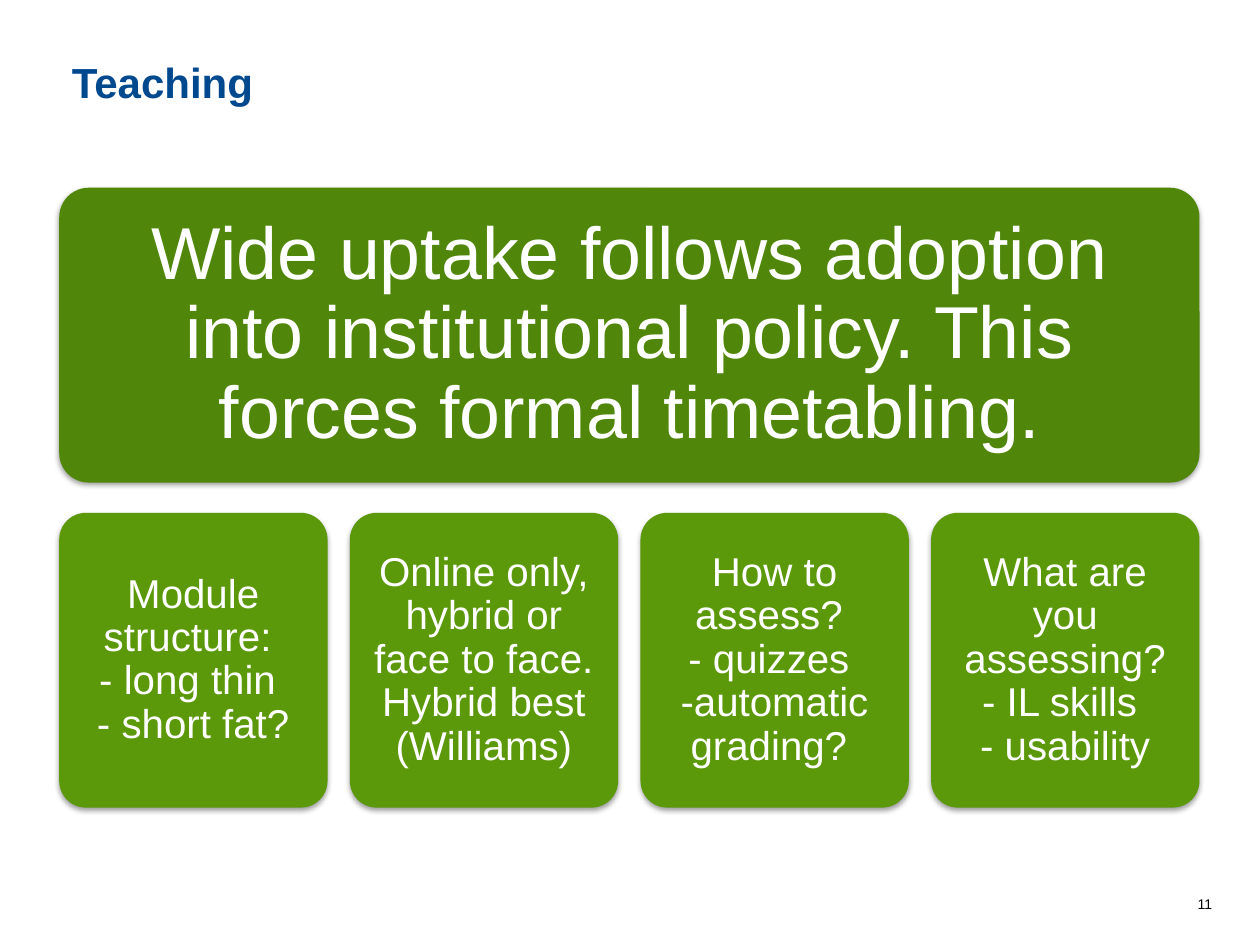
from dataclasses import dataclass

from lxml.etree import SubElement as Sub
from pptx import Presentation
from pptx.dml.color import RGBColor as RGB
from pptx.enum.shapes import MSO_SHAPE as Shape
from pptx.enum.text import MSO_ANCHOR as Anchor, MSO_AUTO_SIZE as Fit, PP_ALIGN as Align
from pptx.oxml.ns import qn
from pptx.util import Inches, Pt

BLUE = RGB(0x01, 0x49, 0x8E)
DARK = RGB(0x50, 0x86, 0x09)
GREEN = RGB(0x5B, 0x98, 0x0A)
WHITE = RGB(0xFF, 0xFF, 0xFF)
BLACK = RGB(0x00, 0x00, 0x00)

LEFT, WIDTH, HEIGHT = 0.47, 9.05, 2.34
CARD = 2.13
TOPICS = [
    "Module structure: \v- long thin \v- short fat?",
    "Online only, hybrid or face to face. Hybrid best (Williams)",
    "How to assess? \v- quizzes \v-automatic grading? ",
    "What are you assessing?\v- IL skills \v- usability",
]


@dataclass
class Panel:
    text: str
    left: float
    top: float
    width: float
    fill: RGB
    size: int
    inset: float


def write(shape, text: str, size: int, color: RGB, align, anchor,
          inset: tuple[float, float], bold: bool = False) -> None:
    """Fill a shape with one formatted paragraph."""
    frame = shape.text_frame
    side, edge = Inches(inset[0]), Inches(inset[1])
    form = {"word_wrap": True, "auto_size": Fit.NONE, "vertical_anchor": anchor,
            "margin_left": side, "margin_right": side,
            "margin_top": edge, "margin_bottom": edge}
    for name, value in form.items():
        setattr(frame, name, value)
    para = frame.paragraphs[0]
    para.text = text
    para.alignment = align
    para.space_before = Pt(0)
    for name, value in {"name": "Arial", "size": Pt(size), "bold": bold}.items():
        setattr(para.font, name, value)
    para.font.color.rgb = color


def shade(shape) -> None:
    """Give a shape a soft shadow below it."""
    shape.shadow.inherit = False
    effects = shape._element.spPr.find(qn("a:effectLst"))
    outer = Sub(effects, qn("a:outerShdw"), blurRad=str(Pt(3.1)), dist=str(Pt(1.6)),
                dir="5400000", rotWithShape="0")
    tint = Sub(outer, qn("a:srgbClr"), val="000000")
    Sub(tint, qn("a:alpha"), val="38000")


def draw(slide, panel: Panel) -> None:
    """Draw a rounded panel with centred white text."""
    box = slide.shapes.add_shape(
        Shape.ROUNDED_RECTANGLE, Inches(panel.left), Inches(panel.top),
        Inches(panel.width), Inches(HEIGHT))
    box.adjustments[0] = 0.1
    box.fill.solid()
    box.fill.fore_color.rgb = panel.fill
    box.line.fill.background()
    shade(box)
    write(box, panel.text, panel.size, WHITE, Align.CENTER, Anchor.MIDDLE,
          (panel.inset, panel.inset))
    box.text_frame.paragraphs[0].line_spacing = 0.9


def main() -> None:
    deck = Presentation()
    deck.slide_width, deck.slide_height = Inches(10), Inches(7.5)
    slide = deck.slides.add_slide(deck.slide_layouts[5])

    # Title
    title = slide.shapes.title
    title.left, title.top = Inches(LEFT), Inches(0.4)
    title.width, title.height = Inches(9.06), Inches(0.59)
    write(title, "Teaching", 24, BLUE, Align.LEFT, Anchor.TOP, (0.1, 0.05), True)

    # Main statement above a row of topics
    draw(slide, Panel("Wide uptake follows adoption into institutional policy. "
                      "This forces formal timetabling.",
                      LEFT, 1.49, WIDTH, DARK, 42, 0.17))
    step = (WIDTH - CARD) / (len(TOPICS) - 1)
    for i, topic in enumerate(TOPICS):
        draw(slide, Panel(topic, LEFT + i * step, 4.07, CARD, GREEN, 23, 0.1))

    # Page number
    page = slide.shapes.add_textbox(Inches(5.39), Inches(7.06), Inches(4.33), Inches(0.24))
    write(page, "11", 8, BLACK, Align.RIGHT, Anchor.TOP, (0.1, 0.05))

    deck.save("out.pptx")


if __name__ == "__main__":
    main()
